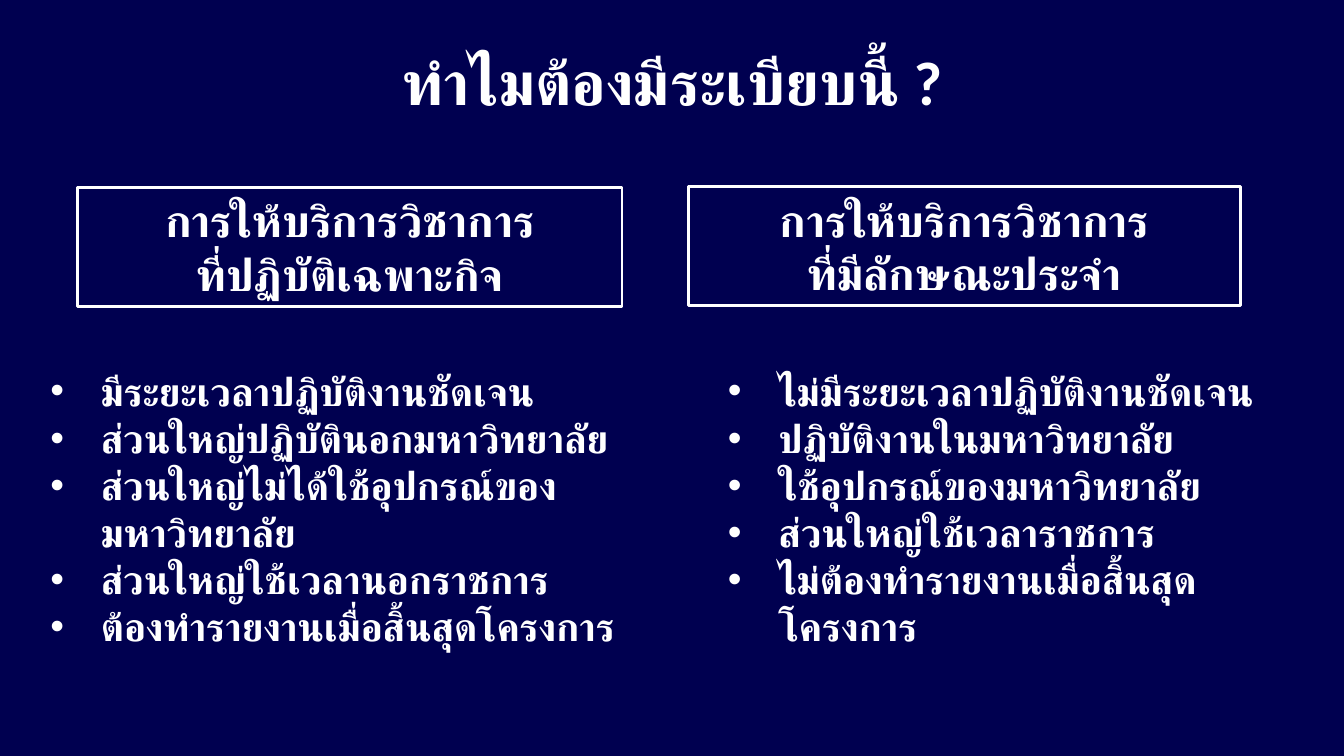
from dataclasses import dataclass

from lxml.etree import SubElement
from pptx import Presentation
from pptx.dml.color import RGBColor
from pptx.enum.lang import MSO_LANGUAGE_ID as Lang
from pptx.enum.shapes import MSO_SHAPE as Preset
from pptx.enum.text import MSO_ANCHOR as Anchor, MSO_AUTO_SIZE as AutoSize, PP_ALIGN as Align
from pptx.oxml.ns import qn
from pptx.shapes.base import BaseShape
from pptx.slide import Slide
from pptx.text.text import TextFrame, _Paragraph as Paragraph
from pptx.util import Inches, Pt

WIDTH, HEIGHT = Inches(13.33), Inches(7.5)


@dataclass(frozen=True)
class Theme:
    background: RGBColor = RGBColor(0x00, 0x00, 0x50)
    ink: RGBColor = RGBColor(0xFF, 0xFF, 0xFF)
    font: str = "Calibri"
    title_size: int = 44
    heading_size: int = 32
    list_size: int = 28
    border: int = 2
    indent: float = 0.5


@dataclass(frozen=True)
class Area:
    """Left, top, width and height in percent of the slide."""
    left: float
    top: float
    width: float
    height: float


@dataclass(frozen=True)
class ServiceType:
    heading_area: Area
    heading: tuple[str, ...]
    list_area: Area
    points: tuple[str, ...]


THEME = Theme()
TITLE = "ทำไมต้องมีระเบียบนี้ ?"
TITLE_AREA = Area(6.9, 1.6, 86.25, 19.33)
SERVICES = (
    ServiceType(
        Area(5.78, 24.8, 40.5, 15.73),
        ("การให้บริการวิชาการ", "ที่ปฏิบัติเฉพาะกิจ"),
        Area(3, 47.87, 46.06, 32.8),
        (
            "มีระยะเวลาปฏิบัติงานชัดเจน",
            "ส่วนใหญ่ปฏิบัตินอกมหาวิทยาลัย",
            "ส่วนใหญ่ไม่ได้ใช้อุปกรณ์ของมหาวิทยาลัย",
            "ส่วนใหญ่ใช้เวลานอกราชการ",
            "ต้องทำรายงานเมื่อสิ้นสุดโครงการ",
        ),
    ),
    ServiceType(
        Area(51.24, 24.67, 41.04, 15.73),
        ("การให้บริการวิชาการ", "ที่มีลักษณะประจำ"),
        Area(53.41, 47.87, 43.96, 32.8),
        (
            "ไม่มีระยะเวลาปฏิบัติงานชัดเจน",
            "ปฏิบัติงานในมหาวิทยาลัย",
            "ใช้อุปกรณ์ของมหาวิทยาลัย",
            "ส่วนใหญ่ใช้เวลาราชการ",
            "ไม่ต้องทำรายงานเมื่อสิ้นสุดโครงการ",
        ),
    ),
)


def place(shape: BaseShape, area: Area) -> None:
    shape.left, shape.width = (round(WIDTH * share / 100) for share in (area.left, area.width))
    shape.top, shape.height = (round(HEIGHT * share / 100) for share in (area.top, area.height))


def write(frame: TextFrame, lines: tuple[str, ...], size: int, align: Align,
          anchor: Anchor, spacing: float = 1.0) -> None:
    frame.word_wrap = True
    frame.auto_size = AutoSize.NONE
    frame.vertical_anchor = anchor
    for number, line in enumerate(lines):
        para = frame.add_paragraph() if number else frame.paragraphs[0]
        para.alignment = align
        para.line_spacing = spacing
        para.space_before = para.space_after = Pt(0)
        span = para.add_run()
        span.text = line
        font = span.font
        font.name, font.size, font.bold = THEME.font, Pt(size), True
        font.color.rgb = THEME.ink
        font.language_id = Lang.THAI
        # Thai text takes its typeface from the complex-script slot
        SubElement(span._r.get_or_add_rPr(), qn("a:cs"), typeface=THEME.font)


def add_bullet(para: Paragraph) -> None:
    properties = para._p.get_or_add_pPr()
    indent = Inches(THEME.indent)
    properties.set("marL", str(indent))
    properties.set("indent", str(-indent))
    SubElement(properties, qn("a:buFont"), typeface="Arial")
    SubElement(properties, qn("a:buChar"), char="•")


def add_heading(page: Slide, service: ServiceType) -> None:
    box = page.shapes.add_shape(Preset.RECTANGLE, 0, 0, 0, 0)
    place(box, service.heading_area)
    box.shadow.inherit = False
    box.fill.background()
    box.line.color.rgb = THEME.ink
    box.line.width = Pt(THEME.border)
    write(box.text_frame, service.heading, THEME.heading_size, Align.CENTER, Anchor.MIDDLE)


def fill_list(body: BaseShape, service: ServiceType) -> None:
    place(body, service.list_area)
    write(body.text_frame, service.points, THEME.list_size, Align.LEFT, Anchor.TOP)
    for para in body.text_frame.paragraphs:
        add_bullet(para)


def main() -> None:
    deck = Presentation()
    deck.slide_width, deck.slide_height = WIDTH, HEIGHT
    page = deck.slides.add_slide(deck.slide_layouts.get_by_name("Two Content"))
    page.background.fill.solid()
    page.background.fill.fore_color.rgb = THEME.background

    # Title
    title = page.shapes.title
    place(title, TITLE_AREA)
    write(title.text_frame, (TITLE,), THEME.title_size, Align.CENTER, Anchor.MIDDLE, 0.9)

    # Two kinds of service, each a framed heading above a list
    for number, service in enumerate(SERVICES, start=1):
        add_heading(page, service)
        fill_list(page.placeholders[number], service)

    deck.save("out.pptx")


if __name__ == "__main__":
    main()
